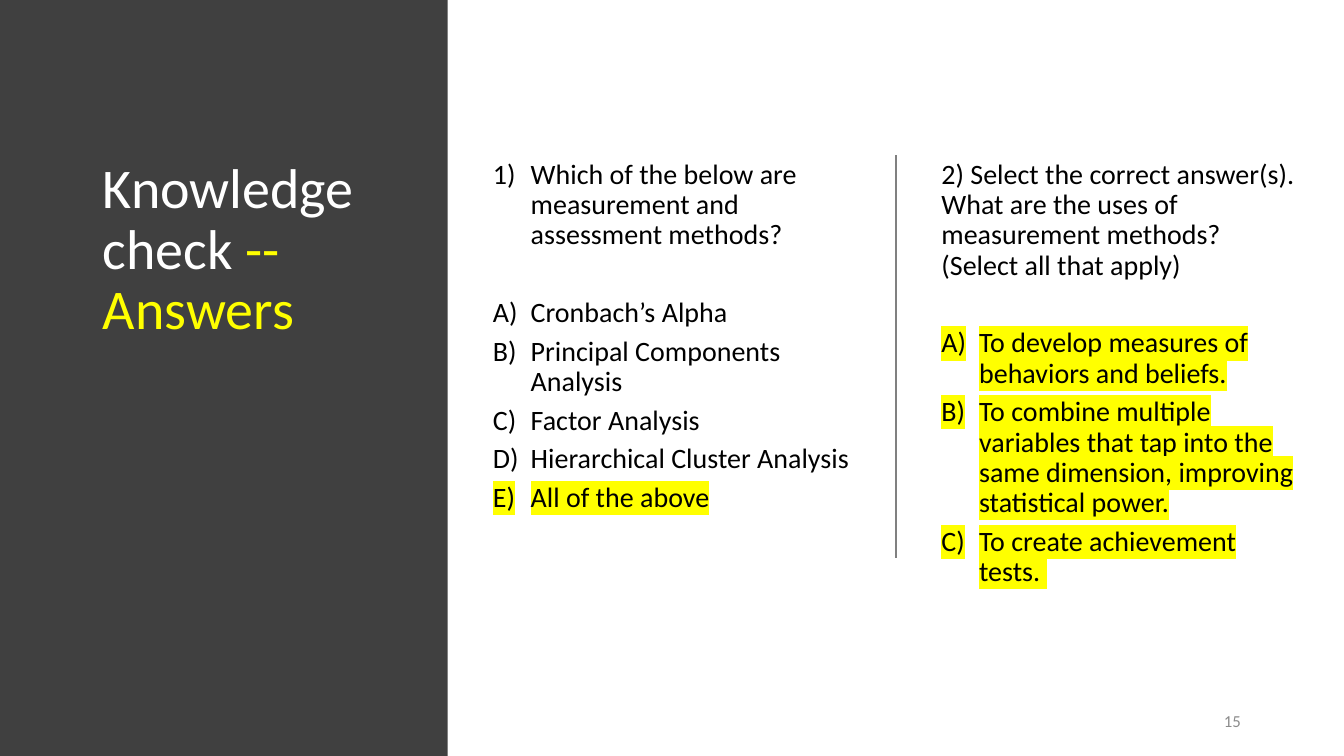
from lxml.etree import SubElement
from pptx import Presentation
from pptx.dml.color import RGBColor
from pptx.enum.shapes import MSO_CONNECTOR as Connector, MSO_SHAPE as Shape
from pptx.enum.text import MSO_ANCHOR as Anchor, MSO_AUTO_SIZE as AutoSize, PP_ALIGN as Align
from pptx.oxml.ns import qn
from pptx.util import Cm, Pt

BLACK = RGBColor(0x00, 0x00, 0x00)
WHITE = RGBColor(0xFF, 0xFF, 0xFF)
CHARCOAL = RGBColor(0x40, 0x40, 0x40)
GRAY = RGBColor(0x80, 0x80, 0x80)
PALE_GRAY = RGBColor(0x8C, 0x8C, 0x8C)
YELLOW = RGBColor(0xFF, 0xFF, 0x00)
FONT = "Calibri"
TOP, HEIGHT = Cm(3.91), Cm(12.12)
QUESTION_GAP, ANSWER_GAP = Pt(34), Pt(6)


def place(shape, box):
    """Move a shape to a left, top, width, height box."""
    shape.left, shape.top, shape.width, shape.height = box


def add_span(para, text, size, color, marked=False):
    """Add one run, highlighted when marked."""
    span = para.add_run()
    span.text = text
    span.font.name = FONT
    span.font.size = Pt(size)
    span.font.color.rgb = color
    if marked:
        props = span.font._element
        highlight = SubElement(props, qn("a:highlight"))
        SubElement(highlight, qn("a:srgbClr")).set("val", str(YELLOW))
        props.find(qn("a:solidFill")).addnext(highlight)


def set_numbering(para, scheme):
    """Give a paragraph automatic numbering, or no bullet without a scheme."""
    props = para._p.get_or_add_pPr()
    hanging = Cm(0.95) if scheme else 0
    props.set("marL", str(hanging))
    props.set("indent", str(-hanging))
    if scheme:
        SubElement(props, qn("a:buFont")).set("typeface", FONT)
        SubElement(props, qn("a:buAutoNum")).set("type", scheme)
    else:
        SubElement(props, qn("a:buNone"))


def prepare_frame(shape):
    """Return the wrapped, top-anchored text frame of a placeholder."""
    frame = shape.text_frame
    frame.word_wrap = True
    frame.auto_size = AutoSize.NONE
    frame.vertical_anchor = Anchor.TOP
    return frame


def build_title_panel(page, box):
    """Fill the dark side panel and set the title on it."""
    left, top, width, height = box
    panel = page.shapes.add_shape(Shape.RECTANGLE, *box)
    panel.shadow.inherit = False
    panel.fill.solid()
    panel.fill.fore_color.rgb = CHARCOAL
    panel.line.fill.background()
    title = page.shapes.title
    title._element.addprevious(panel._element)
    place(title, (left + Cm(2.34), top + TOP, Cm(8.05), HEIGHT))
    para = prepare_frame(title).paragraphs[0]
    para.alignment = Align.LEFT
    para.line_spacing = 0.9
    add_span(para, "Knowledge check ", 40, WHITE)
    add_span(para, "--", 40, YELLOW)
    para.add_line_break()
    add_span(para, "Answers", 40, YELLOW)


def build_question(body, box, question, scheme, answers, correct):
    """Write a question and its lettered answers, marking the correct ones."""
    place(body, box)
    frame = prepare_frame(body)
    rows = [(question, scheme, QUESTION_GAP)]
    rows += [(answer, "alphaUcParenR", ANSWER_GAP) for answer in answers]
    for index, (text, numbering, gap) in enumerate(rows):
        para = frame.add_paragraph() if index else frame.paragraphs[0]
        para.alignment = Align.LEFT
        para.line_spacing = 0.9
        para.space_before = Pt(0)
        para.space_after = gap
        set_numbering(para, numbering)
        add_span(para, text, 20, BLACK, text in correct)


def build_divider(page, left, top, height):
    """Draw the vertical rule between the questions."""
    rule = page.shapes.add_connector(Connector.STRAIGHT, left, top, left, top + height)
    rule.line.color.rgb = GRAY
    rule.line.width = Pt(1)
    SubElement(rule._element.spPr, qn("a:effectLst"))


def build_page_number(page, box):
    """Write the page number at the lower right."""
    frame = page.shapes.add_textbox(*box).text_frame
    frame.word_wrap = True
    frame.vertical_anchor = Anchor.MIDDLE
    para = frame.paragraphs[0]
    para.alignment = Align.RIGHT
    para.space_after = Pt(6)
    add_span(para, "15", 12, PALE_GRAY)


def build_answers_page(deck):
    """Build the knowledge check answers slide."""
    page = deck.slides.add_slide(deck.slide_layouts.get_by_name("Two Content"))
    build_title_panel(page, (0, 0, Cm(11.28), deck.slide_height))
    first, second = list(page.placeholders)[1:3]
    methods = ["Cronbach’s Alpha", "Principal Components Analysis", "Factor Analysis",
               "Hierarchical Cluster Analysis", "All of the above"]
    build_question(first, (Cm(12.17), TOP, Cm(9.53), HEIGHT),
                   "Which of the below are measurement and assessment methods?",
                   "arabicParenR", methods, methods[-1:])
    build_divider(page, Cm(22.58), TOP, Cm(10.16))
    uses = ["To develop measures of behaviors and beliefs.",
            "To combine multiple variables that tap into the same dimension, "
            "improving statistical power.",
            "To create achievement tests. "]
    build_question(second, (Cm(23.47), TOP, Cm(9.53), HEIGHT),
                   "2) Select the correct answer(s). What are the uses of "
                   "measurement methods? (Select all that apply)",
                   None, uses, uses)
    build_page_number(page, (Cm(25.55), Cm(17.65), Cm(5.97), Cm(1.02)))


def main():
    """Create and save the deck."""
    deck = Presentation()
    deck.slide_width, deck.slide_height = Cm(33.87), Cm(19.05)
    build_answers_page(deck)
    deck.save("out.pptx")


if __name__ == "__main__":
    main()
